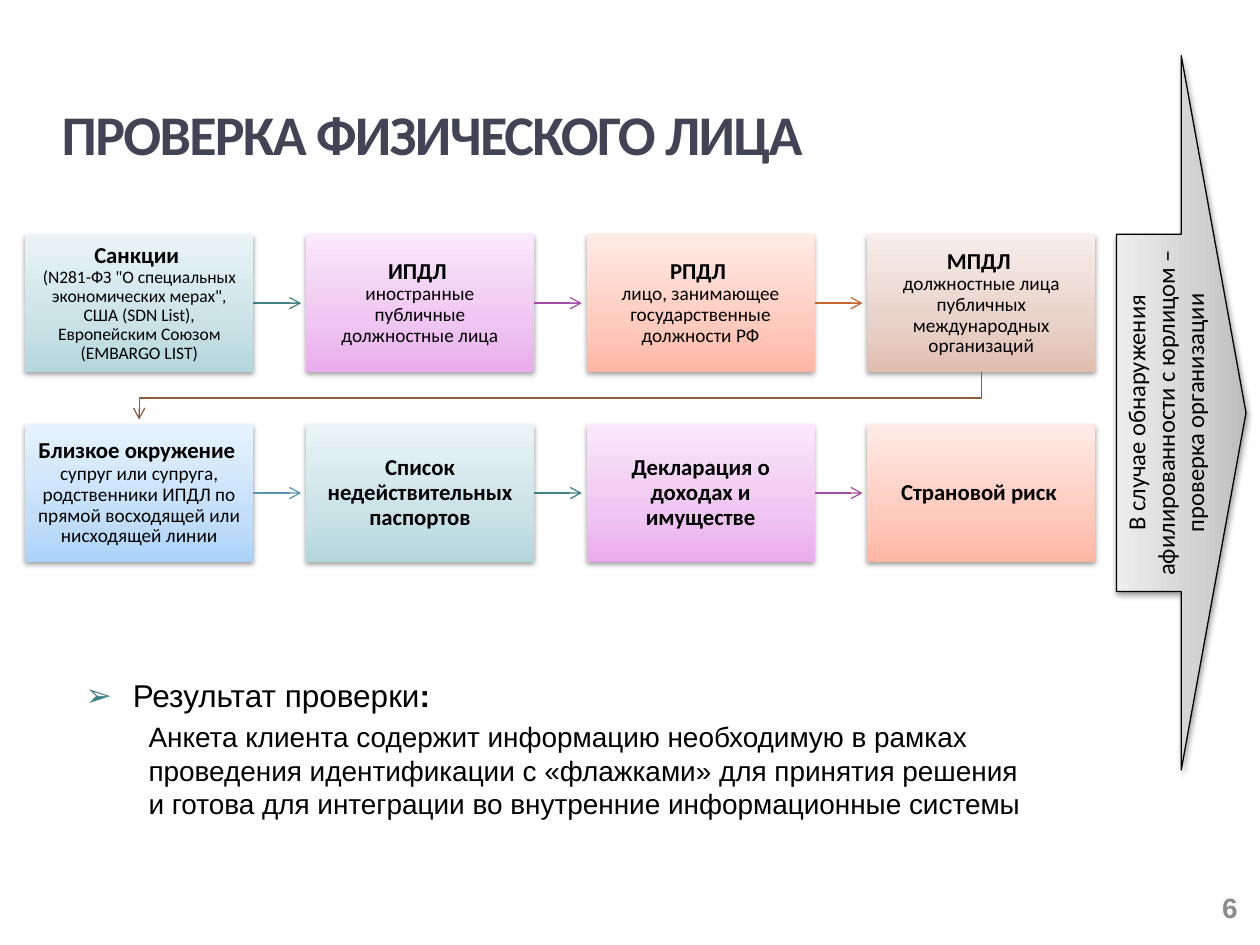
from copy import deepcopy

from lxml.etree import SubElement
from pptx import Presentation
from pptx.dml.color import RGBColor
from pptx.enum.shapes import MSO_CONNECTOR, MSO_SHAPE
from pptx.enum.text import MSO_ANCHOR, MSO_AUTO_SIZE, PP_ALIGN
from pptx.oxml.ns import qn
from pptx.util import Pt

BLACK = RGBColor(0, 0, 0)
NAVY = RGBColor(0x42, 0x44, 0x56)
GREY = RGBColor(0x8C, 0x8C, 0x8C)
TEAL = RGBColor(0x43, 0x80, 0x86)
PLUM = RGBColor(0xA0, 0x4D, 0xA3)
RUST = RGBColor(0xC4, 0x65, 0x2D)
BROWN = RGBColor(0x8B, 0x5D, 0x3D)
BLUE = RGBColor(0x5C, 0x92, 0xB5)


def shades(*codes):
    return [RGBColor.from_string(code) for code in codes]


# Gradients run from the bottom up
AQUA = shades("B3D7DC", "CAE2E6", "EAF4F6")
PINK = shades("EAACED", "EFC5F1", "FAE8FB")
CORAL = shades("FFB6A3", "FFCBBE", "FFEBE6")
SAND = shades("E0BEB0", "E8D1C8", "F7EDEA")
SKY = shades("ABD3F8", "C4DFF9", "E7F3FE")
STEEL = shades("BDBDBD", "D1D1D1", "EEEEEE")

# Grid of boxes
LEFT, STEP, WIDE, HIGH = 14.4, 160.4, 130.3, 78.5
TOPS = (134, 242.5)
REACH = 27.4  # length of an arrow between boxes

# Each box: heading, detail, detail size, shades, colour of the next arrow
ROWS = [
    [("Санкции ", "(N281-ФЗ \"О специальных экономических мерах\", США (SDN List), "
      "Европейским Союзом (EMBARGO LIST)", 10, AQUA, TEAL),
     ("ИПДЛ ", "иностранные публичные должностные лица", 11, PINK, PLUM),
     ("РПДЛ ", "лицо, занимающее государственные должности РФ", 11, CORAL, RUST),
     ("МПДЛ ", "должностные лица публичных международных организаций", 11, SAND, None)],
    [("Близкое окружение ", "супруг или супруга, родственники ИПДЛ по прямой "
      "восходящей или нисходящей линии", 11, SKY, BLUE),
     ("Список недействительных паспортов", "", 11, AQUA, TEAL),
     ("Декларация о доходах и имуществе", "", 11, PINK, PLUM),
     ("Страновой риск ", "", 11, CORAL, None)],
]


def add_run(para, text, size, color=BLACK, bold=False, face="Calibri"):
    run = para.add_run()
    run.text = text
    font = run.font
    font.name, font.size, font.bold = face, Pt(size), bold
    font.color.rgb = color
    return run


def add_break(para, run):
    """Break the line, keeping the size of the run before it."""
    para.add_line_break()
    para._p[-1].append(deepcopy(run._r.rPr))


def add_text(slide, left, top, wide, high):
    box = slide.shapes.add_textbox(Pt(left), Pt(top), Pt(wide), Pt(high))
    box.text_frame.word_wrap = True
    return box.text_frame


def paint(shape, tones):
    """Fill with a three-stop gradient and add a soft shadow."""
    shape.shadow.inherit = False
    shape.fill.gradient()
    shape.fill.gradient_angle = 90
    props = shape._element.spPr
    stops = props.find(qn("a:gradFill")).find(qn("a:gsLst"))
    for stop in list(stops):
        stops.remove(stop)
    for place, tone in zip((0, 35, 100), tones):
        stop = SubElement(stops, qn("a:gs"), pos=str(place * 1000))
        SubElement(stop, qn("a:srgbClr"), val=str(tone))
    shade = SubElement(props.find(qn("a:effectLst")), qn("a:outerShdw"),
                       blurRad=str(Pt(3.1)), dist=str(Pt(1.6)),
                       dir="5400000", rotWithShape="0")
    tint = SubElement(shade, qn("a:srgbClr"), val=str(BLACK))
    SubElement(tint, qn("a:alpha"), val="38000")


def style_line(shape, color):
    """Thin line with an open arrowhead at its end and no shadow."""
    shape.line.color.rgb = color
    shape.line.width = Pt(0.75)
    props = shape._element.spPr
    SubElement(props.find(qn("a:ln")), qn("a:tailEnd"), type="arrow")
    if props.find(qn("a:effectLst")) is None:
        SubElement(props, qn("a:effectLst"))


def add_box(slide, left, top, head, note, size, tones):
    box = slide.shapes.add_shape(MSO_SHAPE.RECTANGLE, Pt(left), Pt(top),
                                 Pt(WIDE), Pt(HIGH))
    paint(box, tones)
    box.line.fill.background()
    frame = box.text_frame
    frame.word_wrap = True
    frame.vertical_anchor = MSO_ANCHOR.MIDDLE
    frame.margin_left = frame.margin_right = Pt(7.2)
    frame.margin_top = frame.margin_bottom = Pt(7.2)
    para = frame.paragraphs[0]
    para.alignment = PP_ALIGN.CENTER
    para.line_spacing = 0.9
    run = add_run(para, head, 13, bold=True)
    if note:
        add_break(para, run)
        add_run(para, note, size)
    return box


def add_flow(slide):
    for top, row in zip(TOPS, ROWS):
        for col, (head, note, size, tones, color) in enumerate(row):
            left = LEFT + col * STEP
            box = add_box(slide, left, top, head, note, size, tones)
            if color is None:
                continue
            start, mid = left + WIDE, Pt(top + HIGH / 2)
            link = slide.shapes.add_connector(
                MSO_CONNECTOR.STRAIGHT, Pt(start), mid, Pt(start + REACH), mid)
            link.begin_connect(box, 3)
            style_line(link, color)


def add_turn(slide):
    """Bent arrow from the end of the first row to the start of the second."""
    first = LEFT + WIDE / 2
    last = first + 3 * STEP
    base = TOPS[0] + HIGH
    bend = base + 15
    path = slide.shapes.build_freeform(Pt(last), Pt(base))
    path.add_line_segments([(Pt(last), Pt(bend)), (Pt(first), Pt(bend)),
                            (Pt(first), Pt(TOPS[1] - 2.7))], close=False)
    turn = path.convert_to_shape()
    turn.fill.background()
    turn.shadow.inherit = False
    style_line(turn, BROWN)


def add_side(slide):
    arrow = slide.shapes.add_shape(MSO_SHAPE.DOWN_ARROW, Pt(470.9), Pt(198.9),
                                   Pt(408.2), Pt(74))
    arrow.rotation = 270
    paint(arrow, STEEL)
    arrow.line.color.rgb = BLACK
    arrow.line.width = Pt(0.75)
    frame = arrow.text_frame
    frame.word_wrap = True
    frame.vertical_anchor = MSO_ANCHOR.MIDDLE
    para = frame.paragraphs[0]
    para.alignment = PP_ALIGN.CENTER
    add_run(para, "В случае обнаружения афилированности с юрлицом – "
                  "проверка организации", 14)


def add_result(slide):
    frame = add_text(slide, 41.8, 383, 573.8, 90)
    frame.auto_size = MSO_AUTO_SIZE.SHAPE_TO_FIT_TEXT
    head = frame.paragraphs[0]
    props = head._p.get_or_add_pPr()
    props.set("marL", str(Pt(27)))
    props.set("indent", str(Pt(-27)))
    tint = SubElement(props, qn("a:buClr"))
    SubElement(tint, qn("a:srgbClr"), val=str(TEAL))
    SubElement(props, qn("a:buFont"), typeface="Arial")
    SubElement(props, qn("a:buChar"), char="➢")
    add_run(head, "Результат проверки", 18, face="Arial")
    add_run(head, ":", 18, bold=True, face="Arial")

    note = frame.add_paragraph()
    note.level = 1
    note._p.get_or_add_pPr().set("marL", str(Pt(36)))
    note._p.pPr.set("indent", "0")
    note.space_before = Pt(1)
    run = add_run(note, "Анкета клиента содержит информацию необходимую в рамках "
                  "проведения идентификации с «флажками» для принятия решения ",
                  16, face="Arial")
    add_break(note, run)
    add_run(note, "и готова для интеграции во внутренние информационные системы",
            16, face="Arial")
    for para in (head, note):
        para.space_after = Pt(2)


def main():
    deck = Presentation()
    deck.slide_width, deck.slide_height = Pt(720), Pt(540)
    slide = deck.slides.add_slide(deck.slide_layouts[6])

    # Title
    frame = add_text(slide, 35.3, 54, 648, 49.7)
    frame.margin_left = frame.margin_right = frame.margin_bottom = 0
    frame.margin_top = Pt(2.9)
    title = add_run(frame.paragraphs[0], "ПРОВЕРКА ФИЗИЧЕСКОГО ЛИЦА", 32, NAVY, True)
    title._r.rPr.set("spc", "-100")

    # Page number
    frame = add_text(slide, 546.5, 504, 167.8, 28.8)
    frame.vertical_anchor = MSO_ANCHOR.MIDDLE
    frame.paragraphs[0].alignment = PP_ALIGN.RIGHT
    add_run(frame.paragraphs[0], "6", 16, GREY, True, "Arial")

    # Steps, side arrow and result
    add_flow(slide)
    add_turn(slide)
    add_side(slide)
    add_result(slide)
    deck.save("out.pptx")


if __name__ == "__main__":
    main()
